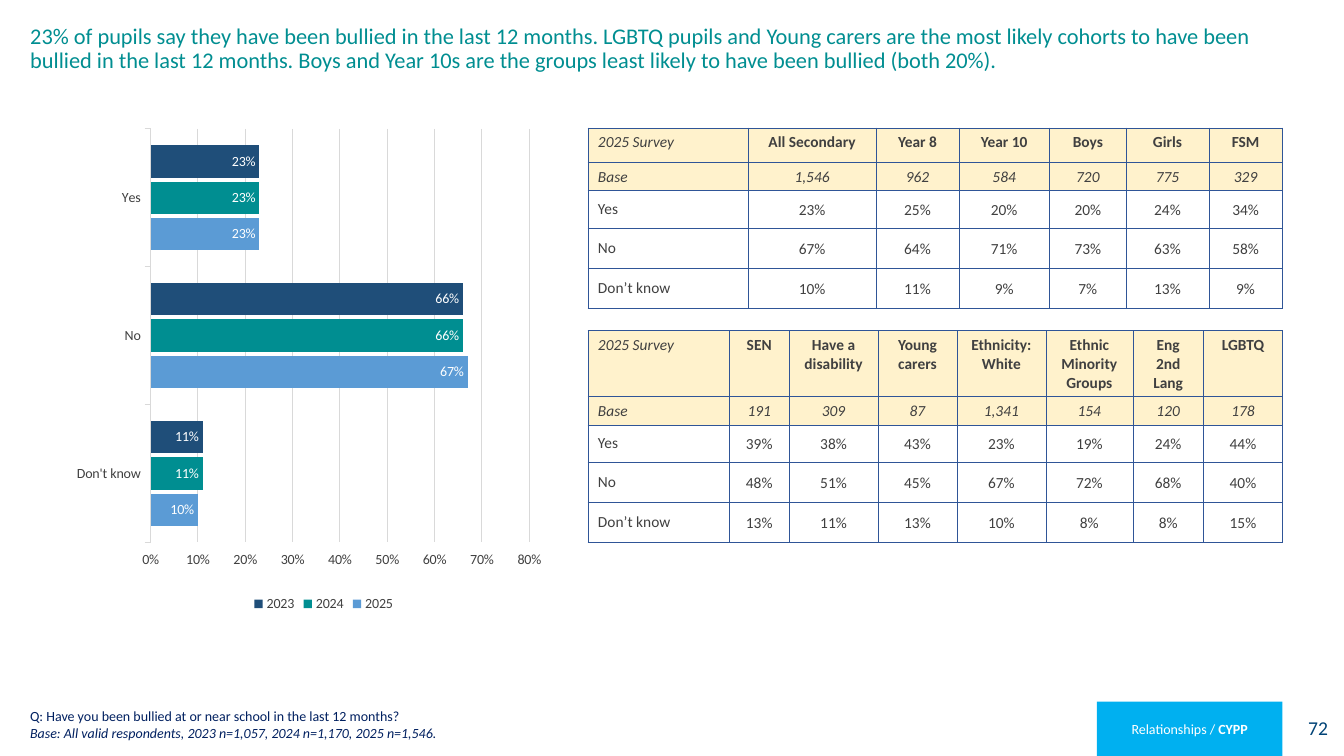
"""Build the slide on bullying in the last 12 months, with a chart and two survey tables."""
from dataclasses import dataclass

from lxml.etree import SubElement
from pptx import Presentation
from pptx.chart.data import CategoryChartData
from pptx.dml.color import RGBColor
from pptx.enum.chart import XL_CHART_TYPE, XL_LABEL_POSITION, XL_LEGEND_POSITION, XL_TICK_MARK
from pptx.enum.shapes import MSO_SHAPE
from pptx.enum.text import MSO_ANCHOR, PP_ALIGN
from pptx.oxml.ns import qn
from pptx.shapes.autoshape import Shape
from pptx.slide import Slide
from pptx.table import _Cell
from pptx.text.text import Font
from pptx.util import Inches, Pt

FONT = "Calibri"
SLIDE_WIDTH = Inches(13.33)
SLIDE_HEIGHT = Inches(7.5)
COLOURS = {
    "white": "FFFFFF", "teal": "008E91", "navy": "002060", "number": "004376",
    "tag": "00B0F0", "text": "404040", "header": "FFF2CC", "border": "2F5597",
    "grid": "D9D9D9", "2025": "5B9BD5", "2024": "008E91", "2023": "1F4E79",
}


@dataclass(frozen=True)
class Box:
    """Position and size in percent of the slide."""
    left: float
    top: float
    width: float
    height: float

    def lengths(self) -> tuple[int, int, int, int]:
        """Return left, top, width and height as slide lengths."""
        return (int(SLIDE_WIDTH * self.left / 100), int(SLIDE_HEIGHT * self.top / 100),
                int(SLIDE_WIDTH * self.width / 100), int(SLIDE_HEIGHT * self.height / 100))


@dataclass(frozen=True)
class SurveyTable:
    """A survey table, with column weights and rows of cell text."""
    box: Box
    column_weights: tuple[int, ...]
    headings: tuple[str, ...]
    bases: tuple[str, ...]
    percentages: tuple[tuple[int, ...], ...]


ANSWERS = ("Yes", "No", "Don’t know")
ROW_SHARES = (4.53, 2.67, 4.93, 5.33, 5.33)
TABLES = (
    SurveyTable(
        Box(43.74, 16.93, 51.69, 22.8),
        (159, 127, 82, 90, 76, 82, 73),
        ("All Secondary", "Year 8", "Year 10", "Boys", "Girls", "FSM"),
        ("1,546", "962", "584", "720", "775", "329"),
        ((23, 25, 20, 20, 24, 34), (67, 64, 71, 73, 63, 58), (10, 11, 9, 7, 13, 9)),
    ),
    SurveyTable(
        Box(43.74, 43.73, 51.69, 22.8),
        (140, 59, 88, 78, 88, 86, 70, 78),
        ("SEN", "Have a disability", "Young carers", "Ethnicity: White",
         "Ethnic Minority Groups", "Eng 2nd Lang", "LGBTQ"),
        ("191", "309", "87", "1,341", "154", "120", "178"),
        ((39, 38, 43, 23, 19, 24, 44), (48, 51, 45, 67, 72, 68, 40),
         (13, 11, 13, 10, 8, 8, 15)),
    ),
)
CHART_BOX = Box(1.5, 12.13, 45.16, 69.33)
CHART_SERIES = {"2025": (0.1, 0.67, 0.23), "2024": (0.11, 0.66, 0.23), "2023": (0.11, 0.66, 0.23)}
PLOT_AREA = {"x": 0.215, "y": 0.071, "w": 0.624, "h": 0.789}


def colour(name: str) -> RGBColor:
    """Look up a named colour."""
    return RGBColor.from_string(COLOURS[name])


def style_font(font: Font, size: float, colour_name: str) -> None:
    """Set the typeface, size and colour of a font."""
    font.name, font.size = FONT, Pt(size)
    font.color.rgb = colour(colour_name)


def add_title(slide: Slide, text: str) -> None:
    """Place and format the title."""
    title = slide.shapes.title
    title.left, title.top, title.width, title.height = Box(1.5, 2.67, 94.22, 13.07).lengths()
    title.text_frame.text = text
    title.text_frame.vertical_anchor = MSO_ANCHOR.TOP
    paragraph = title.text_frame.paragraphs[0]
    paragraph.alignment, paragraph.line_spacing = PP_ALIGN.LEFT, 0.9
    style_font(paragraph.font, 16, "teal")


def add_panel(slide: Slide, box: Box, fill: str, size: float, text_colour: str,
              alignment: PP_ALIGN, text: str) -> Shape:
    """Add a filled rectangle with one line of text."""
    shape = slide.shapes.add_shape(MSO_SHAPE.RECTANGLE, *box.lengths())
    shape.shadow.inherit = False
    shape.fill.solid()
    shape.fill.fore_color.rgb = colour(fill)
    shape.line.fill.background()
    shape.text_frame.vertical_anchor = MSO_ANCHOR.MIDDLE
    paragraph = shape.text_frame.paragraphs[0]
    paragraph.add_run().text = text
    paragraph.alignment = alignment
    style_font(paragraph.font, size, text_colour)
    return shape


def add_footnote(slide: Slide, question: str, base: str) -> None:
    """Add the survey question and its base."""
    text_frame = slide.shapes.add_textbox(*Box(1.5, 92.8, 77.87, 5.87).lengths()).text_frame
    text_frame.word_wrap = True
    text_frame.vertical_anchor = MSO_ANCHOR.BOTTOM
    text_frame.text = f"{question}\n{base}"
    for paragraph in text_frame.paragraphs:
        style_font(paragraph.font, 10, "navy")
    text_frame.paragraphs[1].font.italic = True


def add_borders(cell: _Cell) -> None:
    """Draw a thin line on all four sides of a cell."""
    properties = cell._tc.get_or_add_tcPr()
    for side in ("lnL", "lnR", "lnT", "lnB"):
        line = SubElement(properties, qn(f"a:{side}"), w=str(Pt(0.5)))
        SubElement(SubElement(line, qn("a:solidFill")), qn("a:srgbClr"), val=COLOURS["border"])


def format_cell(cell: _Cell, text: str, row: int, column: int) -> None:
    """Fill in a cell and format it by its row and column."""
    cell.text = text
    add_borders(cell)
    if row < 2:
        cell.fill.solid()
        cell.fill.fore_color.rgb = colour("header")
    else:
        cell.fill.background()
    if row > 0:
        cell.vertical_anchor = MSO_ANCHOR.MIDDLE
    if row > 1 and column > 0:
        cell.margin_left = cell.margin_right = cell.margin_top = Inches(0.01)
        cell.margin_bottom = 0
    paragraph = cell.text_frame.paragraphs[0]
    paragraph.alignment = PP_ALIGN.CENTER if column else PP_ALIGN.LEFT
    style_font(paragraph.font, 11, "text")
    paragraph.font.bold = row == 0 and column > 0
    paragraph.font.italic = row == 1 or (row == 0 and column == 0)


def add_survey_table(slide: Slide, survey: SurveyTable) -> None:
    """Add one survey table."""
    rows = [("2025 Survey", *survey.headings), ("Base", *survey.bases)]
    rows += [(answer, *(f"{value}%" for value in values))
             for answer, values in zip(ANSWERS, survey.percentages)]
    left, top, width, height = survey.box.lengths()
    weights = survey.column_weights
    table = slide.shapes.add_table(len(rows), len(weights), left, top, width, height).table
    for column, weight in zip(table.columns, weights):
        column.width = int(width * weight / sum(weights))
    for row, share in zip(table.rows, ROW_SHARES):
        row.height = int(SLIDE_HEIGHT * share / 100)
    for row_index, texts in enumerate(rows):
        for column_index, text in enumerate(texts):
            format_cell(table.cell(row_index, column_index), text, row_index, column_index)


def add_bar_chart(slide: Slide) -> None:
    """Add the clustered bar chart of answers by year."""
    data = CategoryChartData(number_format="0%")
    data.categories = ("Don't know", "No", "Yes")
    for year, values in CHART_SERIES.items():
        data.add_series(year, values)
    chart = slide.shapes.add_chart(XL_CHART_TYPE.BAR_CLUSTERED, *CHART_BOX.lengths(), data).chart
    style_font(chart.font, 10, "text")
    chart.has_title = False
    chart.has_legend = True
    chart.legend.position = XL_LEGEND_POSITION.BOTTOM
    chart.legend.include_in_layout = False
    plot = chart.plots[0]
    plot.gap_width, plot.overlap, plot.vary_by_categories = 100, -12, False
    for series in plot.series:
        series.format.fill.solid()
        series.format.fill.fore_color.rgb = colour(series.name)
        labels = series.data_labels
        labels.show_value, labels.position = True, XL_LABEL_POSITION.INSIDE_END
        labels.number_format, labels.number_format_is_linked = "0%", False
        style_font(labels.font, 10, "white")
    value_axis, category_axis = chart.value_axis, chart.category_axis
    value_axis.minimum_scale, value_axis.maximum_scale, value_axis.major_unit = 0, 0.8, 0.1
    value_axis.tick_labels.number_format = "0%"
    value_axis.tick_labels.number_format_is_linked = False
    value_axis.format.line.fill.background()
    for axis in (value_axis, category_axis):
        axis.major_tick_mark = XL_TICK_MARK.OUTSIDE
    for line in (category_axis.format.line, value_axis.major_gridlines.format.line):
        line.width, line.color.rgb = Pt(0.75), colour("grid")
    plot_area = chart._chartSpace.chart.plotArea
    for layout in plot_area.findall(qn("c:layout")):
        plot_area.remove(layout)
    layout = plot_area.makeelement(qn("c:layout"))
    plot_area.insert(0, layout)
    manual = SubElement(layout, qn("c:manualLayout"))
    settings = {"layoutTarget": "inner", "xMode": "edge", "yMode": "edge", **PLOT_AREA}
    for name, value in settings.items():
        SubElement(manual, qn(f"c:{name}"), val=str(value))


def main() -> None:
    """Build and save the presentation."""
    presentation = Presentation()
    presentation.slide_width, presentation.slide_height = SLIDE_WIDTH, SLIDE_HEIGHT
    slide = presentation.slides.add_slide(presentation.slide_layouts[5])
    add_panel(slide, Box(95.12, 92.67, 4.43, 7.2), "white", 14, "number", PP_ALIGN.RIGHT, "72")
    add_title(slide, "23% of pupils say they have been bullied in the last 12 months. LGBTQ pupils "
              "and Young carers are the most likely cohorts to have been bullied in the last 12 "
              "months. Boys and Year 10s are the groups least likely to have been bullied (both 20%).")
    add_footnote(slide, "Q: Have you been bullied at or near school in the last 12 months?",
                 "Base: All valid respondents, 2023 n=1,057, 2024 n=1,170, 2025 n=1,546.")
    tag = add_panel(slide, Box(81.62, 92.8, 13.8, 7.2), "tag", 10, "white", PP_ALIGN.CENTER,
                    "Relationships / ")
    section = tag.text_frame.paragraphs[0].add_run()
    section.text, section.font.bold = "CYPP", True
    for survey in TABLES:
        add_survey_table(slide, survey)
    add_bar_chart(slide)
    presentation.save("out.pptx")


if __name__ == "__main__":
    main()
